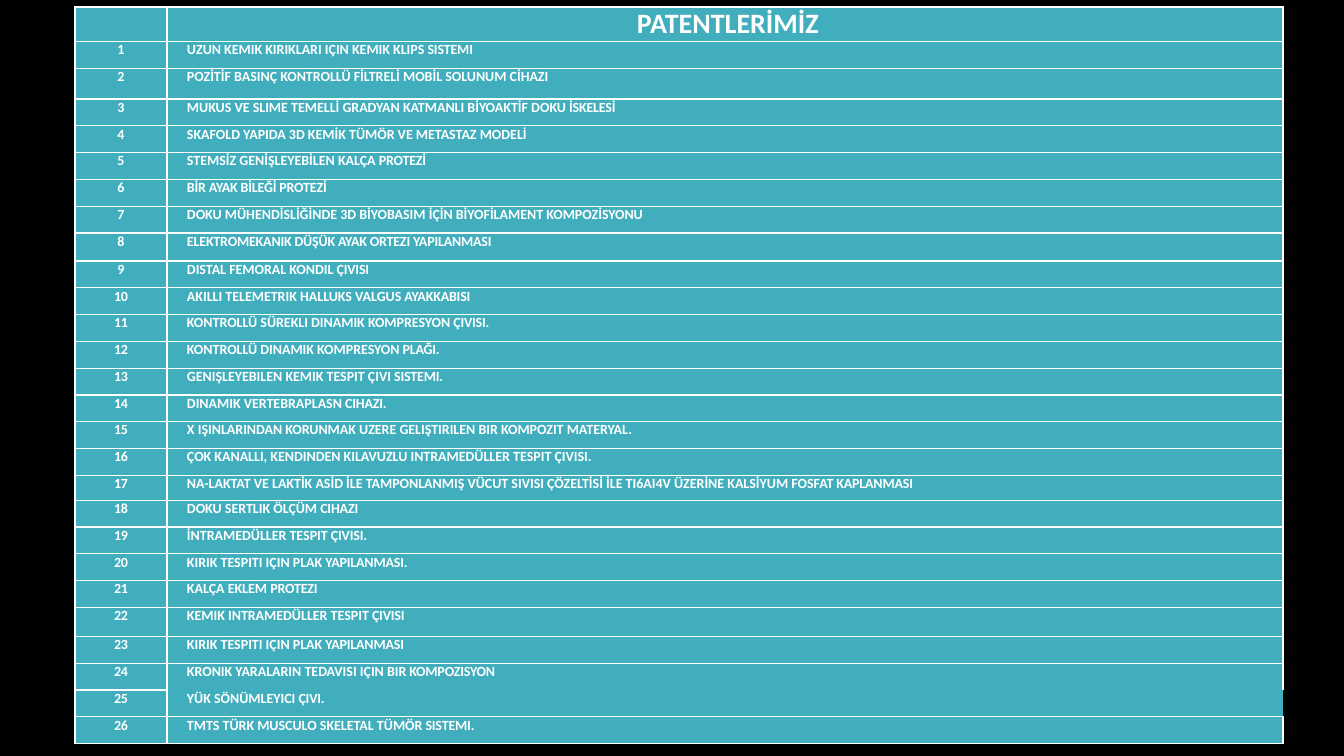
from pptx import Presentation
from pptx.dml.color import RGBColor
from pptx.enum.text import PP_ALIGN
from pptx.oxml.ns import qn
from pptx.util import Pt
from lxml.etree import SubElement

PX = 12192000 / 1344
WHITE, TEAL, BLACK = "FFFFFF", "41AEBD", "000000"
PLAIN = "{2D5ABB26-0587-4C30-8999-92F81FD0307C}"  # no style, no grid

# The part after "|" is set slightly tighter
PATENTS = [
    "UZUN KEMIK KIRIKLARI IÇIN KEMIK KLIPS |SISTEMI",
    "POZİTİF BASINÇ KONTROLLÜ FİLTRELİ MOBİL SOLUNUM CİHAZI",
    "MUKUS VE SLIME TEMELLİ GRADYAN KATMANLI BİYOAKTİF DOKU |İSKELESİ",
    "SKAFOLD YAPIDA 3D KEMİK TÜMÖR VE METASTAZ MODELİ",
    "STEMSİZ GENİŞLEYEBİLEN KALÇA |PROTEZİ",
    "|BİR AYAK BİLEĞİ PROTEZİ",
    "DOKU MÜHENDİSLİĞİNDE 3D BİYOBASIM İÇİN BİYOFİLAMENT KOMPOZİSYONU",
    "|ELEKTROMEKANIK DÜŞÜK AYAK ORTEZI YAPILANMASI",
    "DISTAL FEMORAL KONDIL |ÇIVISI",
    "AKILLI TELEMETRIK HALLUKS VALGUS |AYAKKABISI",
    "KONTROLLÜ SÜREKLI DINAMIK KOMPRESYON |ÇIVISI.",
    "KONTROLLÜ DINAMIK KOMPRESYON |PLAĞI.",
    "GENIŞLEYEBILEN KEMIK TESPIT ÇIVI |SISTEMI.",
    "DINAMIK VERTEBRAPLASN |CIHAZI.",
    "X IŞINLARINDAN KORUNMAK UZERE GELIŞTIRILEN BIR KOMPOZIT MATERYAL.",
    "ÇOK KANALLI, KENDINDEN KILAVUZLU INTRAMEDÜLLER TESPIT ÇIVISI.",
    "NA-LAKTAT VE LAKTİK ASİD İLE TAMPONLANMIŞ VÜCUT SIVISI ÇÖZELTİSİ "
    "İLE TI6AI4V ÜZERİNE KALSİYUM FOSFAT |KAPLANMASI",
    "DOKU SERTLIK ÖLÇÜM |CIHAZI",
    "İNTRAMEDÜLLER TESPIT |ÇIVISI.",
    "KIRIK TESPITI IÇIN PLAK |YAPILANMASI.",
    "KALÇA EKLEM |PROTEZI",
    "KEMIK INTRAMEDÜLLER TESPIT |ÇIVISI",
    "KIRIK TESPITI IÇIN PLAK |YAPILANMASI",
    "KRONIK YARALARIN TEDAVISI IÇIN BIR| KOMPOZISYON",
    "YÜK SÖNÜMLEYICI |ÇIVI.",
    "TMTS TÜRK MUSCULO SKELETAL TÜMÖR |SISTEMI.",
]


def color(code):
    return RGBColor.from_string(code)


def write(cell, text, size=10, align=None, left=0):
    para = cell.text_frame.paragraphs[0]
    para.alignment = align
    para._p.get_or_add_pPr().set("marL", str(round(left * PX)))
    for part, space in zip(text.split("|"), (0, -10)):
        if part:
            run = para.add_run()
            run.text = part
            font = run.font
            font.name, font.size, font.bold = "Calibri", Pt(size), True
            font.color.rgb = color(WHITE)
            run._r.get_or_add_rPr().set("spc", str(space))


# Slide
deck = Presentation()
deck.slide_width, deck.slide_height = round(1344 * PX), round(756 * PX)
slide = deck.slides.add_slide(deck.slide_layouts[6])
slide.background.fill.solid()
slide.background.fill.fore_color.rgb = color(BLACK)

# Table frame
WIDE, HIGH = 1208, 737
count = len(PATENTS) + 1
frame = slide.shapes.add_table(count, 2, *(round(n * PX) for n in (75, 7, WIDE, HIGH)))
table = frame.table
table.first_row = table.horz_banding = False
table._tbl.tblPr.find(qn("a:tableStyleId")).text = PLAIN
for col, width in zip(table.columns, (92, WIDE - 92)):
    col.width = round(width * PX)

# Row heights: a few are set, the others share the rest
odd = {0: 34, 2: 31, 8: 28, 17: 25, 22: 29}
share = (HIGH - sum(odd.values())) / (count - len(odd))
for i, row in enumerate(table.rows):
    row.height = round(odd.get(i, share) * PX)

# Cell borders and fill; two cells on the right have open sides
gaps = {(24, 1): "B", (25, 1): "TR"}
for i in range(count):
    for j in range(2):
        cell = table.cell(i, j)
        cell.margin_left = cell.margin_right = 0
        cell.margin_top = cell.margin_bottom = 0
        for side in "LRTB":
            line = SubElement(cell._tc.get_or_add_tcPr(), qn("a:ln" + side), w=str(Pt(1)))
            if side in gaps.get((i, j), ""):
                SubElement(line, qn("a:noFill"))
            else:
                fill = SubElement(line, qn("a:solidFill"))
                SubElement(fill, qn("a:srgbClr"), val=WHITE)
        cell.fill.solid()
        cell.fill.fore_color.rgb = color(TEAL)

# Text
write(table.cell(0, 1), "PATENTLERİMİZ", 20, PP_ALIGN.CENTER, 6)
for i, name in enumerate(PATENTS, 1):
    tight = "|" if i > 9 else ""
    write(table.cell(i, 0), tight + str(i), align=PP_ALIGN.CENTER)
    write(table.cell(i, 1), name, left=20)

deck.save("out.pptx")
